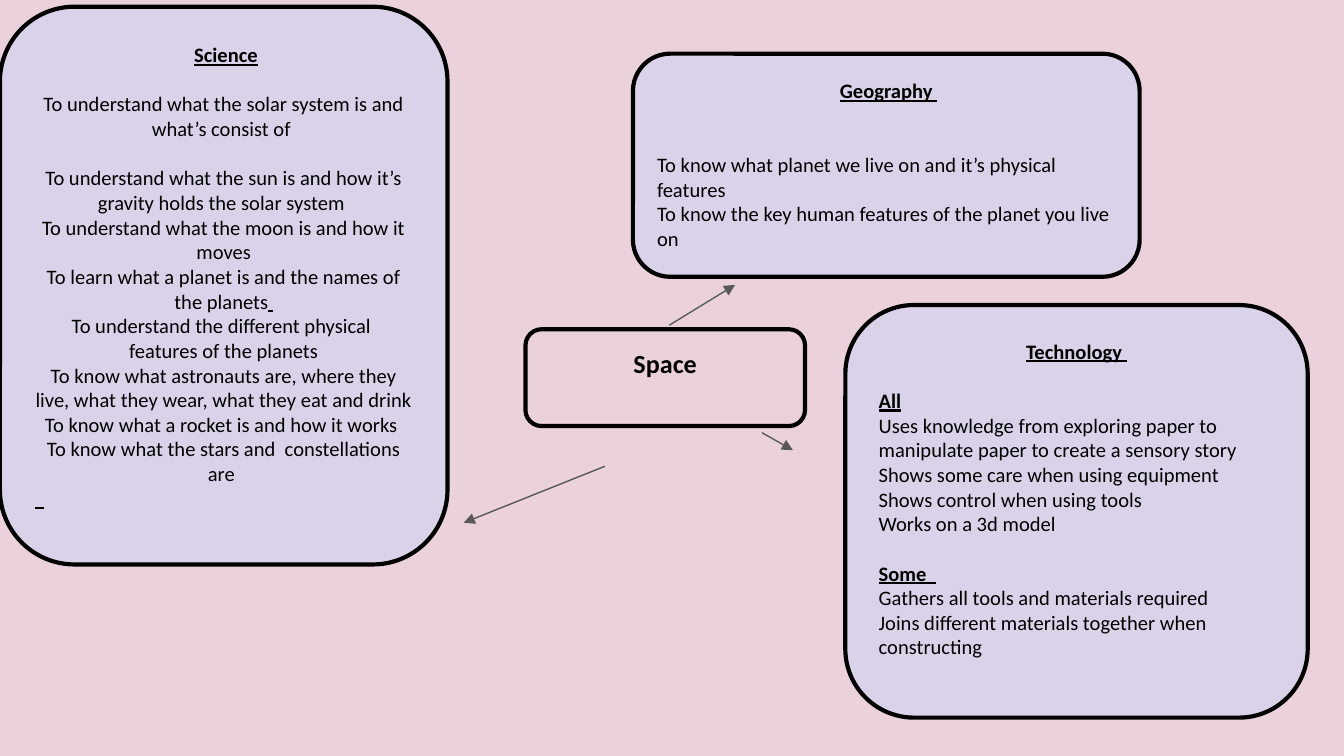
from lxml import etree
from pptx import Presentation
from pptx.dml.color import RGBColor
from pptx.enum.shapes import MSO_CONNECTOR, MSO_SHAPE
from pptx.enum.text import MSO_ANCHOR, PP_ALIGN
from pptx.oxml.ns import qn
from pptx.util import Inches, Pt

ROUNDED = MSO_SHAPE.ROUNDED_RECTANGLE
STRAIGHT = MSO_CONNECTOR.STRAIGHT
TOP = MSO_ANCHOR.TOP
LEFT, CENTER = PP_ALIGN.LEFT, PP_ALIGN.CENTER

COLORS = {"pink": "EAD1DC", "lilac": "D9D2E9", "ink": "000000", "arrow": "595959"}
FONT = "Calibri"
LINE_GAP = 13.2  # height of one 11 pt line


def color(name):
    return RGBColor.from_string(COLORS[name])


def text(content, size=11, bold=False, underline=False, align=LEFT, before=0,
         plain_start="", underlined_end=""):
    """Describe one paragraph as spans of (text, bold, underline)."""
    spans = [(plain_start, False, False), (content, bold, underline),
             (underlined_end, True, True)]
    return {"spans": [span for span in spans if span[0]],
            "size": size, "align": align, "before": before}


def heading(content, **layout):
    return text(content, bold=True, underline=True, **layout)


class TopicMap:
    def __init__(self, page):
        self.page = page
        page.background.fill.solid()
        page.background.fill.fore_color.rgb = color("pink")

    def topic(self, left, top, width, height, paragraphs, fill="lilac"):
        box = self.page.shapes.add_shape(
            ROUNDED, Inches(left), Inches(top), Inches(width), Inches(height))
        box.shadow.inherit = False
        box.fill.solid()
        box.fill.fore_color.rgb = color(fill)
        box.line.color.rgb = color("ink")
        box.line.width = Pt(2.25)
        frame = box.text_frame
        frame.word_wrap = True
        frame.vertical_anchor = TOP
        frame.margin_left = frame.margin_right = Inches(0.1)
        frame.margin_top = frame.margin_bottom = Inches(0.1)
        for index, item in enumerate(paragraphs):
            para = frame.add_paragraph() if index else frame.paragraphs[0]
            self.fill_paragraph(para, item)

    def fill_paragraph(self, para, item):
        para.alignment = item["align"]
        para.space_before = Pt(item["before"])
        for content, bold, underline in item["spans"]:
            span = para.add_run()
            span.text = content
            font = span.font
            font.name, font.size = FONT, Pt(item["size"])
            font.bold, font.underline = bold, underline
            font.color.rgb = color("ink")

    def arrow(self, start, end):
        line = self.page.shapes.add_connector(
            STRAIGHT, *(Inches(value) for value in (*start, *end)))
        line.line.color.rgb = color("arrow")
        line.line.width = Pt(0.75)
        outline = line.line._get_or_add_ln()
        etree.SubElement(outline, qn("a:tailEnd"), type="triangle")
        etree.SubElement(line._element.spPr, qn("a:effectLst"))


def main():
    deck = Presentation()
    deck.slide_width = Inches(10)
    deck.slide_height = Inches(10) * 9 // 16
    topics = TopicMap(deck.slides.add_slide(deck.slide_layouts[6]))

    topics.topic(3.91, 2.45, 2.08, 0.72,
                 [text("Space", size=14, bold=True, align=CENTER)], fill="pink")

    topics.topic(6.29, 2.27, 3.44, 3.07, [
        heading("Technology ", align=CENTER),
        heading("All", before=LINE_GAP),
        text("Uses knowledge from exploring paper to manipulate paper to create a sensory story"),
        text("Shows some care when using equipment"),
        text("Shows control when using tools"),
        text("Works on a 3d model"),
        heading("Some  ", before=LINE_GAP),
        text("Gathers all tools and materials required"),
        text("Joins different materials together when constructing"),
    ])

    science_goals = [
        ("To understand what the solar system is and what’s consist of ", LINE_GAP, ""),
        ("To understand what the sun is and how it’s gravity holds the solar system ",
         LINE_GAP, ""),
        ("To understand what the moon is and how it moves", 0, ""),
        ("To learn what a planet is and the names of the planets", 0, " "),
        ("To understand the different physical  features of the planets", 0, ""),
        ("To know what astronauts are, where they live, what they wear, "
         "what they eat and drink ", 0, ""),
        ("To know what a rocket is and how it works ", 0, ""),
        ("To know what the stars and  constellations are ", 0, ""),
    ]
    topics.topic(0, 0.05, 3.33, 4.15, [
        heading("Science", align=CENTER, plain_start=" "),
        *(text(goal, align=CENTER, before=before, underlined_end=end)
          for goal, before, end in science_goals),
        heading("  "),
    ])

    topics.topic(4.71, 0.4, 3.77, 1.66, [
        heading("Geography ", align=CENTER, plain_start=" "),
        text("To know what planet we live on and it’s physical features", before=2 * LINE_GAP),
        text("To know the key human features of the planet you live on"),
    ])

    for start, end in [
        ((5.67, 3.22), (5.9, 3.35)),
        ((4.5, 3.47), (3.45, 3.89)),
        ((4.98, 2.42), (5.47, 2.12)),
    ]:
        topics.arrow(start, end)

    deck.save("out.pptx")


if __name__ == "__main__":
    main()
